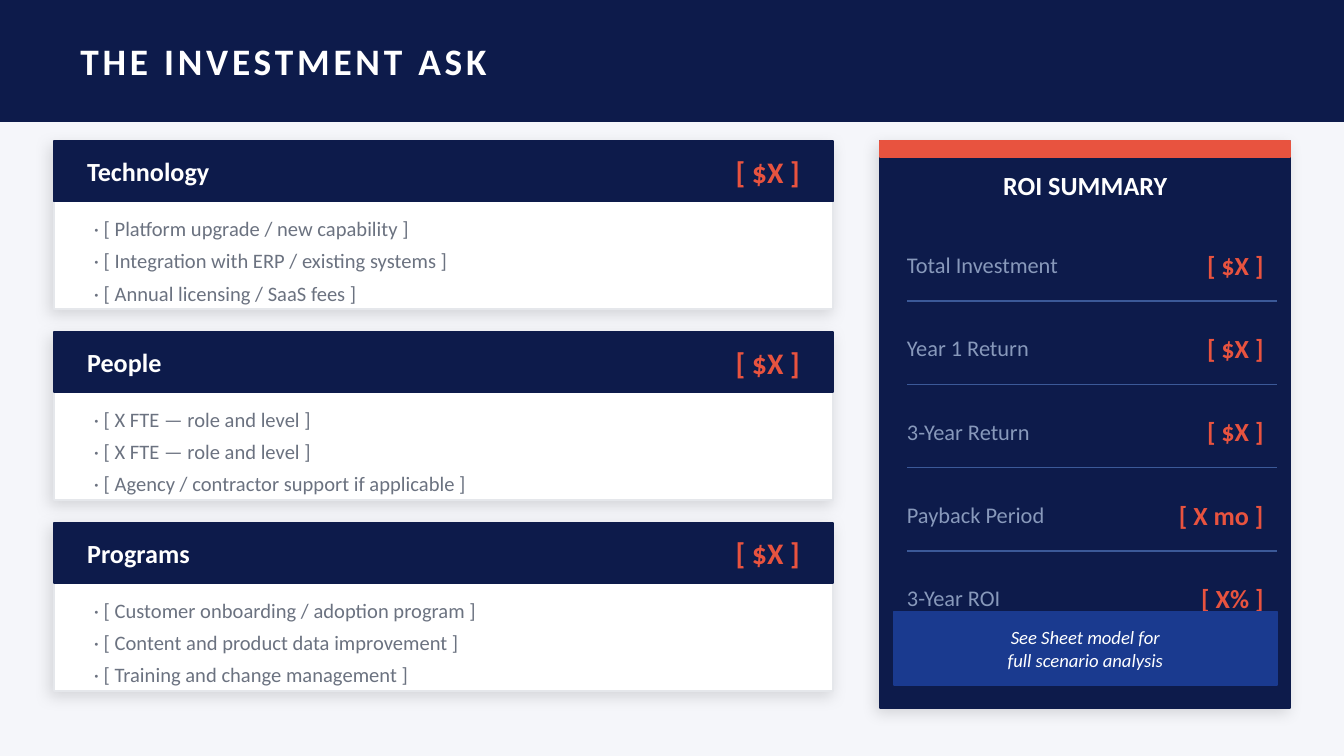
import pptx
import pptx.dml.color
import pptx.enum.shapes
import pptx.enum.text
import pptx.oxml.ns
import pptx.util
from lxml import etree

Inches = pptx.util.Inches
Pt = pptx.util.Pt
qn = pptx.oxml.ns.qn
ALIGN = pptx.enum.text.PP_ALIGN

COLORS = {
    "page": "F5F6FA", "navy": "0D1B4B", "white": "FFFFFF", "border": "E5E7EB",
    "accent": "E8533F", "body": "6B7280", "label": "8899BB", "rule": "3B5998",
    "note": "1A3A8F", "shadow": "000000",
}
BUDGETS = [
    ("Technology", "[ $X ]", ["[ Platform upgrade / new capability ]",
                              "[ Integration with ERP / existing systems ]",
                              "[ Annual licensing / SaaS fees ]"]),
    ("People", "[ $X ]", ["[ X FTE — role and level ]",
                          "[ X FTE — role and level ]",
                          "[ Agency / contractor support if applicable ]"]),
    ("Programs", "[ $X ]", ["[ Customer onboarding / adoption program ]",
                            "[ Content and product data improvement ]",
                            "[ Training and change management ]"]),
]
RETURNS = [
    ("Total Investment", "[ $X ]"), ("Year 1 Return", "[ $X ]"),
    ("3-Year Return", "[ $X ]"), ("Payback Period", "[ X mo ]"),
    ("3-Year ROI", "[ X% ]"),
]


class Deck:
    """Hold the style and the current slide."""

    def __init__(self):
        self.font = "Calibri"
        self.presentation = pptx.Presentation()
        self.presentation.slide_width = Inches(10)
        self.presentation.slide_height = Inches(10 * 9 / 16)
        self.slide = self.presentation.slides.add_slide(self.presentation.slide_layouts[6])
        background = self.slide.background.fill
        background.solid()
        background.fore_color.rgb = self.color("page")

    def color(self, name):
        return pptx.dml.color.RGBColor.from_string(COLORS[name])

    def panel(self, left, top, width, height, fill, line=None, shadow=False):
        panel = self.slide.shapes.add_shape(
            pptx.enum.shapes.MSO_SHAPE.RECTANGLE,
            Inches(left), Inches(top), Inches(width), Inches(height))
        panel.fill.solid()
        panel.fill.fore_color.rgb = self.color(fill)
        panel.line.color.rgb = self.color(line or fill)
        panel.line.width = Pt(1)
        panel.shadow.inherit = False
        if shadow:
            effects = panel._element.spPr.find(qn("a:effectLst"))
            outer = etree.SubElement(
                effects, qn("a:outerShdw"), blurRad=str(Pt(8)), dist=str(Pt(3)),
                dir=str(135 * 60000), algn="bl", rotWithShape="0")
            tint = etree.SubElement(outer, qn("a:srgbClr"), val=COLORS["shadow"])
            etree.SubElement(tint, qn("a:alpha"), val="12000")

    def text(self, left, top, width, height, wording, size, color,
             bold=False, italic=False, align=ALIGN.LEFT, spacing=0):
        frame = self.slide.shapes.add_textbox(
            Inches(left), Inches(top), Inches(width), Inches(height)).text_frame
        frame.word_wrap = True
        frame.vertical_anchor = pptx.enum.text.MSO_ANCHOR.MIDDLE
        frame.text = wording
        for paragraph in frame.paragraphs:
            paragraph.alignment = align
            paragraph.font.name = self.font
            paragraph.font.size = Pt(size)
            paragraph.font.bold = bold
            paragraph.font.italic = italic
            paragraph.font.color.rgb = self.color(color)
            if spacing:
                for run in paragraph.runs:
                    run._r.get_or_add_rPr().set("spc", str(spacing * 100))

    def rule(self, left, right, y):
        rule = self.slide.shapes.add_connector(
            pptx.enum.shapes.MSO_CONNECTOR.STRAIGHT,
            Inches(left), Inches(y), Inches(right), Inches(y))
        rule.line.color.rgb = self.color("rule")
        rule.line.width = Pt(0.75)
        etree.SubElement(rule._element.spPr, qn("a:effectLst"))

    def budget_card(self, top, heading, amount, items):
        self.panel(0.4, top, 5.8, 1.25, "white", "border", shadow=True)
        self.panel(0.4, top, 5.8, 0.45, "navy")
        self.text(0.55, top, 4, 0.45, heading, 14, "white", bold=True)
        self.text(5, top, 1.05, 0.45, amount, 16, "accent", bold=True, align=ALIGN.RIGHT)
        for row, item in enumerate(items):
            self.text(0.6, top + 0.53 + row * 0.24, 5.45, 0.24, f"· {item}", 11, "body")

    def return_row(self, top, label, amount):
        self.text(6.65, top, 1.7, 0.5, label, 12, "label")
        self.text(8.35, top, 1.15, 0.5, amount, 14, "accent", bold=True, align=ALIGN.RIGHT)


def main():
    deck = Deck()
    deck.panel(0, 0, 10, 0.9, "navy")
    deck.text(0.5, 0, 9, 0.9, "THE INVESTMENT ASK", 20, "white", bold=True, spacing=2)

    for index, budget in enumerate(BUDGETS):
        deck.budget_card(1.05 + index * 1.42, *budget)

    deck.panel(6.55, 1.05, 3.05, 4.22, "navy", shadow=True)
    deck.panel(6.55, 1.05, 3.05, 0.12, "accent")
    deck.text(6.65, 1.15, 2.85, 0.45, "ROI SUMMARY", 14, "white",
              bold=True, align=ALIGN.CENTER)
    for index, (label, amount) in enumerate(RETURNS):
        top = 1.72 + index * 0.62
        deck.return_row(top, label, amount)
        if index < len(RETURNS) - 1:
            deck.rule(6.75, 9.5, top + 0.52)

    deck.panel(6.65, 4.55, 2.85, 0.55, "note")
    deck.text(6.65, 4.55, 2.85, 0.55, "See Sheet model for\nfull scenario analysis",
              10, "white", italic=True, align=ALIGN.CENTER)
    deck.presentation.save("out.pptx")


if __name__ == "__main__":
    main()
